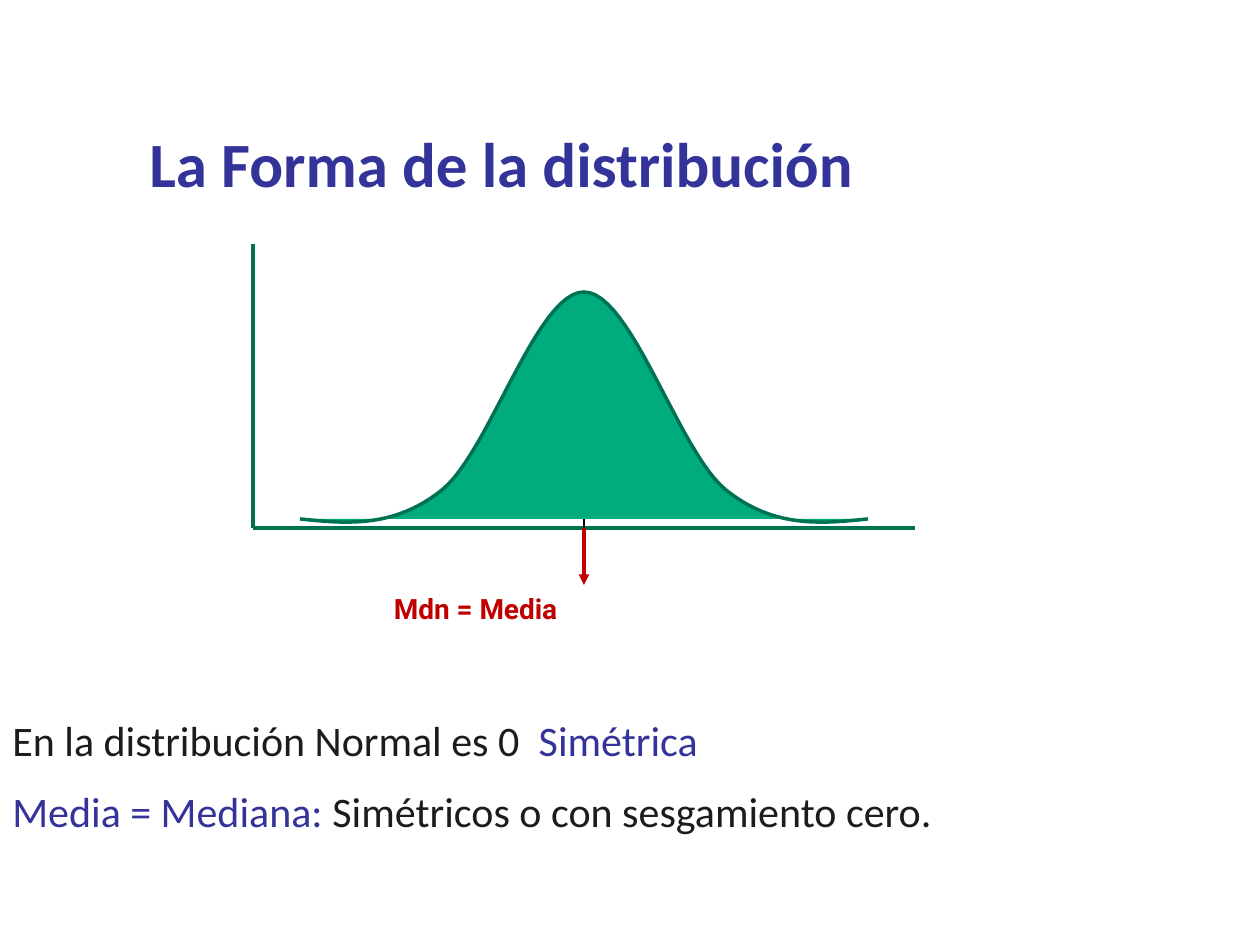
from pptx import Presentation
from pptx import util as u
from pptx.dml.color import RGBColor
from pptx.enum import shapes, text
from pptx.oxml import ns, xmlchemy

PX_PER_INCH = 126

WHITE = RGBColor(0xFF, 0xFF, 0xFF)
BLACK = RGBColor(0x00, 0x00, 0x00)
INK = RGBColor(0x1C, 0x1C, 0x1C)
BLUE = RGBColor(0x33, 0x33, 0x99)
RED = RGBColor(0xC0, 0x00, 0x00)
GREEN = RGBColor(0x00, 0xAB, 0x7E)
DARK_GREEN = RGBColor(0x00, 0x72, 0x54)

# Plot geometry in px
AXIS_X, AXIS_TOP, AXIS_Y, AXIS_RIGHT = 253, 244, 528, 915
MEAN_X, PEAK_Y, ARROW_TIP = 584, 292, 585
CURVE_LEFT, CURVE_WIDTH = 300, 568
HALF_HEIGHTS = [519, 524, 528, 490, 452, 292, 292]
STEPS = 24


def px(length):
    return u.Emu(round(length * 914400 / PX_PER_INCH))


def fill_text(frame, paragraphs, font, size, bold=False, space_before=0):
    """Each paragraph is a list of (wording, colour) runs."""
    frame.word_wrap = True
    frame.vertical_anchor = text.MSO_ANCHOR.TOP
    for index, runs in enumerate(paragraphs):
        paragraph = frame.paragraphs[0] if index == 0 else frame.add_paragraph()
        paragraph.alignment = text.PP_ALIGN.LEFT
        paragraph.space_before = u.Pt(space_before)
        for wording, color in runs:
            run = paragraph.add_run()
            run.text = wording
            run.font.name = font
            run.font.size = u.Pt(size)
            run.font.bold = bold
            run.font.color.rgb = color


def add_text(slide, left, top, width, height, paragraphs, size, **style):
    box = slide.shapes.add_textbox(px(left), px(top), px(width), px(height))
    fill_text(box.text_frame, paragraphs, "Calibri", size, **style)


def add_line(slide, start, end, color, weight=2, arrow=False):
    line = slide.shapes.add_connector(
        shapes.MSO_CONNECTOR.STRAIGHT, *map(px, start + end))
    line.line.color.rgb = color
    line.line.width = u.Pt(weight)
    if arrow:
        tail = xmlchemy.OxmlElement("a:tailEnd")
        tail.set("type", "triangle")
        line.line._get_or_add_ln().append(tail)
    properties = line._element.find(ns.qn("p:spPr"))
    properties.append(xmlchemy.OxmlElement("a:effectLst"))


def bell_points():
    """Sample four cubic Bezier arcs whose control points are evenly spaced."""
    heights = HALF_HEIGHTS + HALF_HEIGHTS[-2::-1]
    arcs = [heights[i:i + 4] for i in range(0, len(heights) - 1, 3)]
    points = [(CURVE_LEFT, heights[0])]
    for arc, (a, b, c, d) in enumerate(arcs):
        for step in range(1, STEPS + 1):
            t = step / STEPS
            s = 1 - t
            x = CURVE_LEFT + CURVE_WIDTH * (arc + t) / len(arcs)
            y = s**3 * a + 3 * s * s * t * b + 3 * s * t * t * c + t**3 * d
            points.append((x, y))
    return [(px(x), px(y)) for x, y in points]


def add_bell(slide):
    start, *rest = bell_points()
    builder = slide.shapes.build_freeform(*start)
    builder.add_line_segments(rest, close=False)
    bell = builder.convert_to_shape()
    bell.shadow.inherit = False
    bell.fill.solid()
    bell.fill.fore_color.rgb = GREEN
    bell.line.color.rgb = DARK_GREEN
    bell.line.width = u.Pt(2)


def add_mean_label(slide):
    label = slide.shapes.add_shape(
        shapes.MSO_SHAPE.RECTANGLE, px(374), px(585), px(553), px(96))
    label.shadow.inherit = False
    label.fill.solid()
    label.fill.fore_color.rgb = WHITE
    label.line.fill.background()
    label.text_frame.margin_left = px(20)
    fill_text(label.text_frame, [[("Mdn = Media", RED)]], "Roboto", 16, bold=True)


def main():
    prs = Presentation()
    prs.slide_width, prs.slide_height = px(1260), px(945)
    slide = prs.slides.add_slide(prs.slide_layouts[6])

    # Distribution plot
    add_mean_label(slide)
    add_line(slide, (AXIS_X, AXIS_TOP), (AXIS_X, AXIS_Y), DARK_GREEN)
    add_line(slide, (AXIS_X, AXIS_Y), (AXIS_RIGHT, AXIS_Y), DARK_GREEN)
    add_line(slide, (MEAN_X, PEAK_Y + 9), (MEAN_X, AXIS_Y), BLACK, 0.75)
    add_bell(slide)
    add_line(slide, (MEAN_X, AXIS_Y), (MEAN_X, ARROW_TIP), RED, arrow=True)

    # Explanation
    add_text(slide, 0, 708, 1260, 292, [
        [("En la distribución Normal es 0  ", INK), ("Simétrica", BLUE)],
        [("Media = Mediana: ", BLUE),
         ("Simétricos o con sesgamiento cero.", INK)],
    ], 24, space_before=12)

    # Title
    add_text(slide, 137, 118, 741, 89,
             [[("La Forma de la distribución", BLUE)]], 36, bold=True)

    prs.save("out.pptx")


if __name__ == "__main__":
    main()
